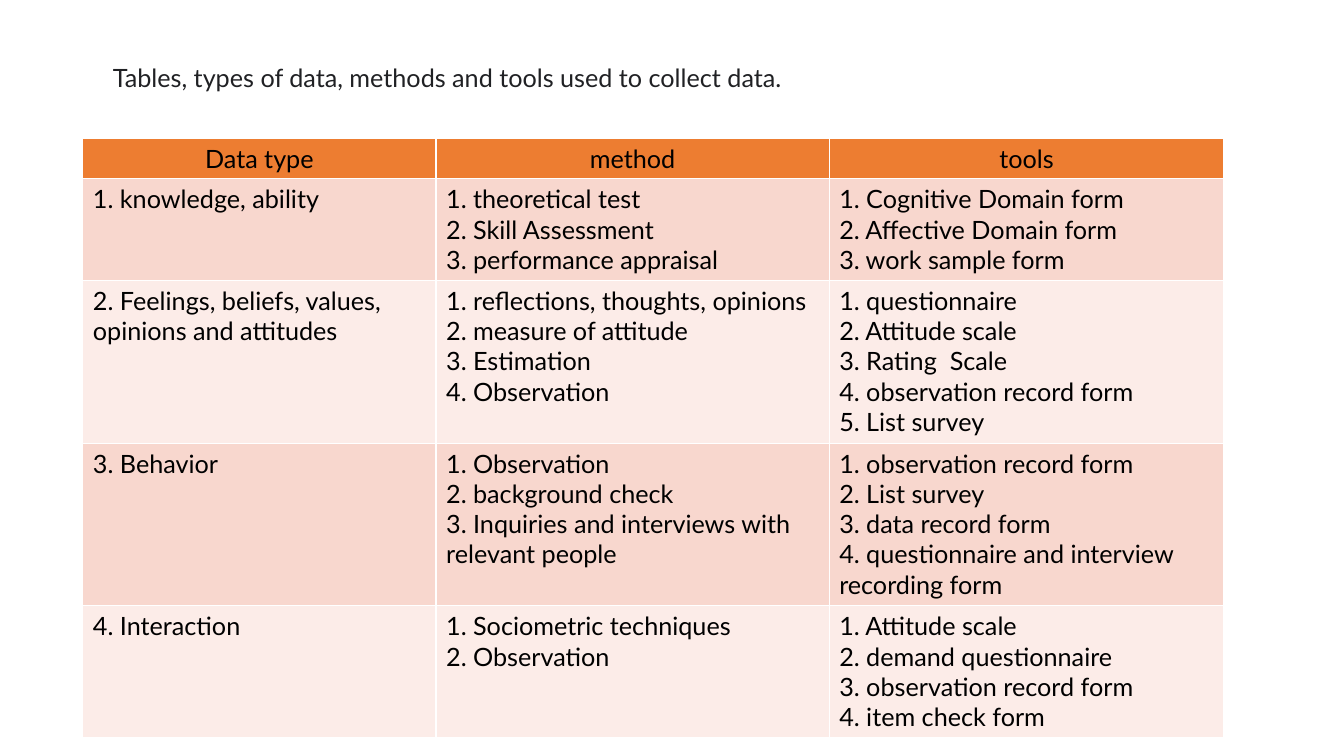
from lxml.etree import SubElement
from pptx import Presentation
from pptx.dml.color import RGBColor
from pptx.enum.text import PP_ALIGN
from pptx.oxml.ns import qn
from pptx.util import Pt

COLORS = {
    "heading": "202124",
    "text": "000000",
    "header": "ED7D31",
    "band_dark": "F8D7CE",
    "band_light": "FCECE8",
    "border": "FFFFFF",
}
FONT = "Lato"
FONT_SIZE = 18
LINE_HEIGHT = 21.8
CELL_PADDING = 7.2
COLUMN_WIDTHS = (252.3, 280.8, 282)
HEADING = "Tables, types of data, methods and tools used to collect data."
HEADERS = ("Data type", "method", "tools")
ROWS = (
    (3, (
        ["1. knowledge, ability"],
        ["1. theoretical test", "2. Skill Assessment", "3. performance appraisal"],
        ["1. Cognitive Domain form", "2. Affective Domain form", "3. work sample form"],
    )),
    (5, (
        ["2. Feelings, beliefs, values, opinions and attitudes"],
        ["1. reflections, thoughts, opinions", "2. measure of attitude",
         "3. Estimation", "4. Observation"],
        ["1. questionnaire", "2. Attitude scale", "3. Rating  Scale",
         "4. observation record form", "5. List survey"],
    )),
    (5, (
        ["3. Behavior"],
        ["1. Observation", "2. background check",
         "3. Inquiries and interviews with relevant people"],
        ["1. observation record form", "2. List survey", "3. data record form",
         "4. questionnaire and interview recording form"],
    )),
    (4, (
        ["4. Interaction"],
        ["1. Sociometric techniques", "2. Observation"],
        ["1. Attitude scale", "2. demand questionnaire",
         "3. observation record form", "4. item check form"],
    )),
)


def write_text(para, text, color="text", align=PP_ALIGN.LEFT, size=FONT_SIZE):
    para.alignment = align
    span = para.add_run()
    span.text = text
    span.font.name = FONT
    span.font.size = Pt(size)
    span.font.bold = False
    span.font.color.rgb = RGBColor.from_string(COLORS[color])


def add_borders(cell, width=1):
    properties = cell._tc.get_or_add_tcPr()
    for side in ("lnL", "lnR", "lnT", "lnB"):
        line = SubElement(properties, qn(f"a:{side}"), w=str(Pt(width)))
        fill = SubElement(line, qn("a:solidFill"))
        SubElement(fill, qn("a:srgbClr"), val=COLORS["border"])


def fill_cell(cell, lines, fill, align=PP_ALIGN.LEFT):
    add_borders(cell)
    cell.fill.solid()
    cell.fill.fore_color.rgb = RGBColor.from_string(COLORS[fill])
    frame = cell.text_frame
    for index, text in enumerate(lines):
        para = frame.add_paragraph() if index else frame.paragraphs[0]
        write_text(para, text, align=align)


def add_heading(page):
    box = page.placeholders[1]
    box.left, box.top, box.width, box.height = Pt(73.4), Pt(43.2), Pt(828), Pt(342.7)
    para = box.text_frame.paragraphs[0]
    para.line_spacing = 0.9
    para.space_before = Pt(10)
    write_text(para, HEADING, color="heading")
    properties = para._p.get_or_add_pPr()
    properties.set("marL", "0")
    properties.set("indent", "0")
    SubElement(properties, qn("a:buNone"))


def add_data_table(page):
    heights = [count * LINE_HEIGHT + CELL_PADDING for count in (1, *(row[0] for row in ROWS))]
    frame = page.shapes.add_table(
        len(heights), len(HEADERS), Pt(59.2), Pt(98.8), Pt(sum(COLUMN_WIDTHS)), Pt(sum(heights)))
    table = frame.table
    for column, width in zip(table.columns, COLUMN_WIDTHS):
        column.width = Pt(width)
    for row, height in zip(table.rows, heights):
        row.height = Pt(height)
    for column, text in enumerate(HEADERS):
        fill_cell(table.cell(0, column), [text], "header", align=PP_ALIGN.CENTER)
    for row, (_, cells) in enumerate(ROWS, start=1):
        band = "band_dark" if row % 2 else "band_light"
        for column, lines in enumerate(cells):
            fill_cell(table.cell(row, column), lines, band)


def main():
    """Build the slide on data types, methods and tools."""
    deck = Presentation()
    deck.slide_width, deck.slide_height = Pt(960), Pt(540)
    page = deck.slides.add_slide(deck.slide_layouts[1])
    title = page.shapes.title
    title.element.getparent().remove(title.element)
    add_heading(page)
    add_data_table(page)
    deck.save("out.pptx")


if __name__ == "__main__":
    main()
